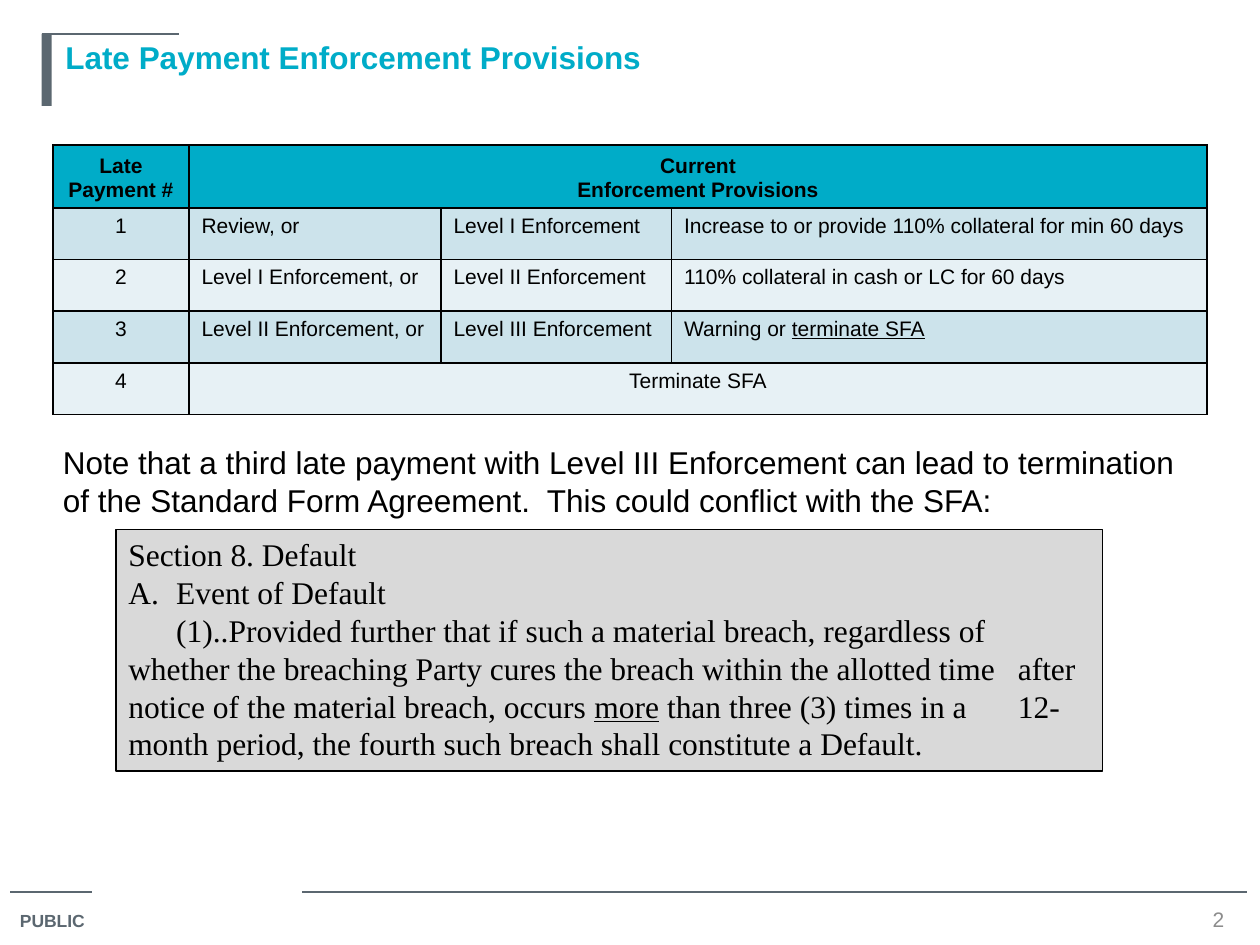
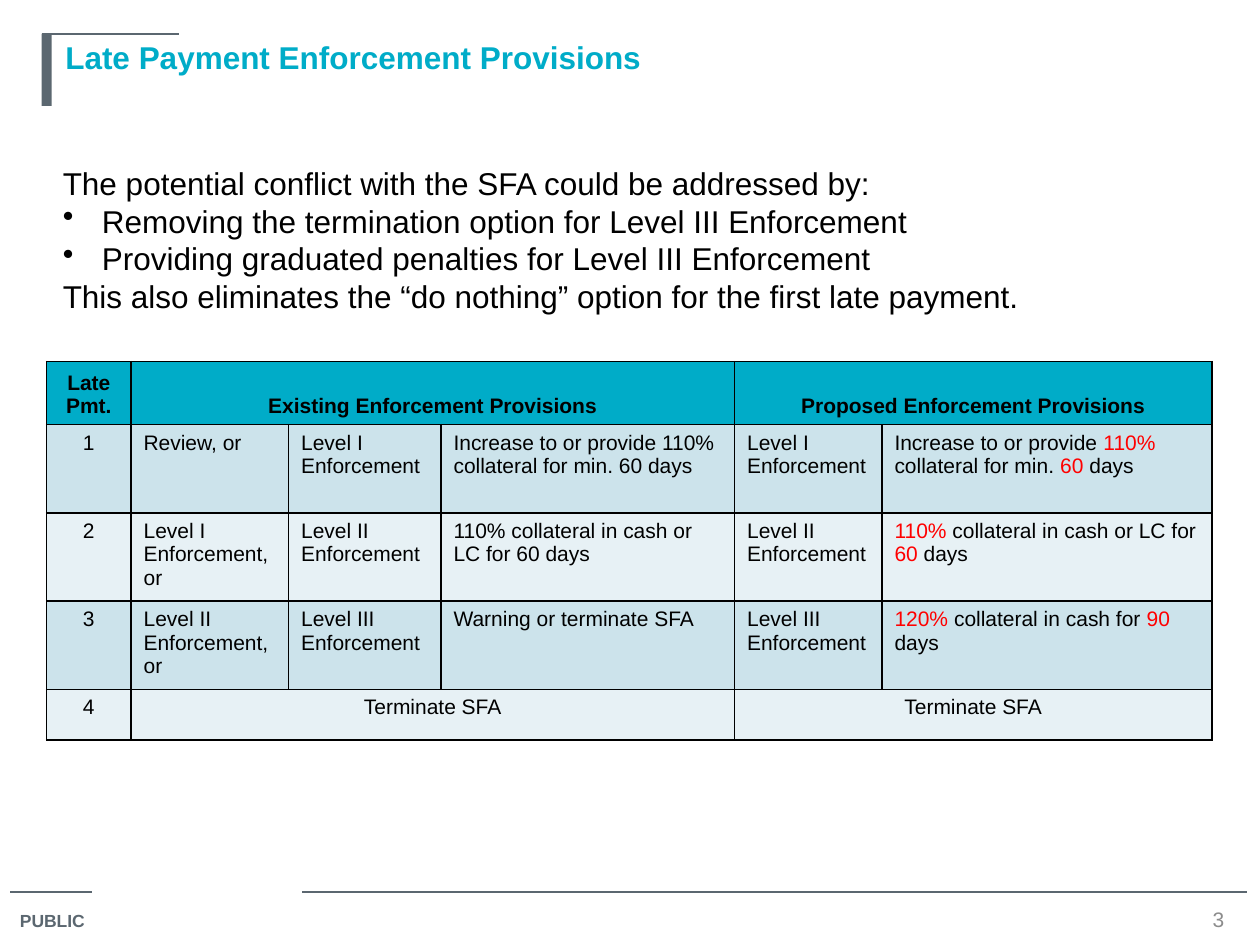
from lxml import etree
from pptx import Presentation
from pptx.dml.color import RGBColor
from pptx.enum.shapes import MSO_CONNECTOR, MSO_SHAPE
from pptx.enum.text import MSO_ANCHOR, PP_ALIGN
from pptx.oxml.ns import qn
from pptx.util import Inches, Pt

SLATE = RGBColor(0x5B, 0x67, 0x70)
TEAL = RGBColor(0x00, 0xAC, 0xC8)
BAND_DARK = RGBColor(0xCC, 0xE3, 0xEB)
BAND_LIGHT = RGBColor(0xE7, 0xF1, 0xF5)
QUOTE_GRAY = RGBColor(0xD9, 0xD9, 0xD9)
NUMBER_GRAY = RGBColor(0x8C, 0x8C, 0x8C)
BLACK = RGBColor(0, 0, 0)
RED = RGBColor(0xFF, 0, 0)
LEFT, CENTER = PP_ALIGN.LEFT, PP_ALIGN.CENTER
TOP, MIDDLE, BOTTOM = MSO_ANCHOR.TOP, MSO_ANCHOR.MIDDLE, MSO_ANCHOR.BOTTOM
STRAIGHT = MSO_CONNECTOR.STRAIGHT
RECTANGLE = MSO_SHAPE.RECTANGLE
TITLE = "Late Payment Enforcement Provisions"

CURRENT_ROWS = [
    ["Late Payment #", "Current\nEnforcement Provisions", None, None],
    ["1", "Review, or", "Level I Enforcement",
     "Increase to or provide 110% collateral for min 60 days"],
    ["2", "Level I Enforcement, or", "Level II Enforcement",
     "110% collateral in cash or LC for 60 days"],
    ["3", "Level II Enforcement, or", "Level III Enforcement",
     "Warning or *terminate SFA*"],
    ["4", "Terminate SFA", None, None],
]
PROPOSED_ROWS = [
    ["Late Pmt.", "Existing Enforcement Provisions", None, None,
     "Proposed Enforcement Provisions", None],
    ["1", "Review, or", "Level I Enforcement",
     "Increase to or provide 110% collateral for min. 60 days",
     "Level I Enforcement", "Increase to or provide *110% *collateral for min. *60* days"],
    ["2", "Level I Enforcement, or", "Level II Enforcement",
     "110% collateral in cash or LC for 60 days",
     "Level II Enforcement", "*110%* collateral in cash or LC for *60* days"],
    ["3", "Level II Enforcement, or", "Level III Enforcement",
     "Warning or terminate SFA",
     "Level III Enforcement", "*120%* collateral in cash for *90* days"],
    ["4", "Terminate SFA", None, None, "Terminate SFA", None],
]


def underline(font):
    """Mark a run by underlining it."""
    font.underline = True


def redden(font):
    """Mark a run by colouring it red."""
    font.color.rgb = RED


def write(frame, lines, size, color=BLACK, bold=False, name="Arial",
          align=LEFT, emphasis=underline, bullets=None):
    """Fill a text frame; pieces between asterisks get the emphasis."""
    for index, line in enumerate(lines):
        paragraph = frame.paragraphs[0] if index == 0 else frame.add_paragraph()
        paragraph.alignment = align
        for position, piece in enumerate(line.split("*")):
            if piece:
                run = paragraph.add_run()
                run.text = piece
                if position % 2:
                    emphasis(run.font)
        if bullets and index in bullets:
            add_bullet(paragraph, *bullets[index])
        if "\t" in line:
            add_tabs(paragraph, 0.38, 7.06)
        paragraph.font.size = Pt(size)
        paragraph.font.name = name
        paragraph.font.bold = bold
        paragraph.font.color.rgb = color


def add_bullet(paragraph, tag, attribute, value, indent):
    """Give a paragraph a hanging bullet or number."""
    properties = paragraph._p.get_or_add_pPr()
    properties.set("marL", str(Inches(indent)))
    properties.set("indent", str(-Inches(indent)))
    etree.SubElement(properties, qn(tag)).set(attribute, value)


def add_tabs(paragraph, *stops):
    """Set left tab stops, in inches."""
    tabs = etree.SubElement(paragraph._p.get_or_add_pPr(), qn("a:tabLst"))
    for stop in stops:
        etree.SubElement(tabs, qn("a:tab"), pos=str(Inches(stop)), algn="l")


def add_text(slide, box, lines, size, anchor=TOP, **style):
    """Place a wrapping text box."""
    frame = slide.shapes.add_textbox(*map(Inches, box)).text_frame
    frame.word_wrap = True
    frame.vertical_anchor = anchor
    write(frame, lines, size, **style)


def add_rectangle(slide, box, fill):
    """Place a flat filled rectangle without an outline."""
    shape = slide.shapes.add_shape(RECTANGLE, *map(Inches, box))
    shape.shadow.inherit = False
    shape.fill.solid()
    shape.fill.fore_color.rgb = fill
    shape.line.fill.background()
    return shape


def add_rule(slide, left, right, top):
    """Draw a thin horizontal rule."""
    rule = slide.shapes.add_connector(
        STRAIGHT, Inches(left), Inches(top), Inches(right), Inches(top))
    rule.line.color.rgb = SLATE
    rule.line.width = Pt(0.75)
    etree.SubElement(rule._element.spPr, qn("a:effectLst"))


def add_header(slide, left, top):
    """Draw the title with its corner bracket."""
    add_rectangle(slide, (left, top, 0.08, 0.57), SLATE)
    add_rule(slide, left, left + 1.09, top)
    add_text(slide, (left + 0.09, top - 0.02, 9.25, 1.25), [TITLE], 18,
             color=TEAL, bold=True)


def add_footer(slide, top, number):
    """Draw the footer rules, label and slide number."""
    add_rule(slide, 0.08, 0.73, top)
    add_rule(slide, 2.4, 9.9, top)
    add_text(slide, (0.06, top + 0.09, 0.77, 0.28), ["PUBLIC"], 10,
             color=SLATE, bold=True)
    add_text(slide, (9.42, top + 0.1, 0.5, 0.23), [str(number)], 12,
             anchor=MIDDLE, color=NUMBER_GRAY, align=CENTER)


def add_borders(cell):
    """Outline a cell in black."""
    properties = cell._tc.get_or_add_tcPr()
    for side in ("a:lnL", "a:lnR", "a:lnT", "a:lnB"):
        line = etree.SubElement(properties, qn(side), w=str(Pt(1)))
        fill = etree.SubElement(line, qn("a:solidFill"))
        etree.SubElement(fill, qn("a:srgbClr"), val=str(BLACK))


def add_provisions(slide, left, top, widths, heights, rows, emphasis):
    """Build a banded table, where None continues the cell on its left."""
    table = slide.shapes.add_table(
        len(rows), len(widths), Inches(left), Inches(top),
        Inches(sum(widths)), Inches(sum(heights))).table
    table.first_row = table.horz_banding = False
    for column, width in zip(table.columns, widths):
        column.width = Inches(width)
    for row, height in zip(table.rows, heights):
        row.height = Inches(height)
    for row_index, row in enumerate(rows):
        heading = row_index == 0
        band = BAND_DARK if row_index % 2 else BAND_LIGHT
        for column_index, text in enumerate(row):
            cell = table.cell(row_index, column_index)
            add_borders(cell)
            cell.fill.solid()
            cell.fill.fore_color.rgb = TEAL if heading else band
            if text is None:
                continue
            end = column_index + 1
            while end < len(row) and row[end] is None:
                end += 1
            spans = end - column_index > 1
            if spans:
                cell.merge(table.cell(row_index, end - 1))
            if heading:
                cell.vertical_anchor = BOTTOM
            centered = heading or spans or column_index == 0
            write(cell.text_frame, text.split("\n"), 12, bold=heading,
                  align=CENTER if centered else LEFT, emphasis=emphasis)


def add_quotation(slide, box):
    """Draw the gray excerpt from the agreement."""
    shape = add_rectangle(slide, box, QUOTE_GRAY)
    shape.line.color.rgb = BLACK
    shape.line.width = Pt(0.75)
    frame = shape.text_frame
    frame.word_wrap = True
    frame.vertical_anchor = TOP
    write(frame, [
        "Section 8. Default",
        "Event of Default",
        "\t(1)..Provided further that if such a material breach, regardless of "
        "\twhether the breaching Party cures the breach within the allotted time "
        "\tafter notice of the material breach, occurs *more* than three (3) times "
        "in a \t12-month period, the fourth such breach shall constitute a Default.",
    ], 18, name="Times New Roman",
        bullets={1: ("a:buAutoNum", "type", "alphaUcPeriod", 0.38)})


def add_base_slide(presentation, number):
    """Add a blank slide with the shared header and footer."""
    slide = presentation.slides.add_slide(presentation.slide_layouts[6])
    add_footer(slide, 7.08, number)
    add_header(slide, 0.33, 0.27)
    return slide


def build_current_slide(presentation):
    """Show the current provisions and the conflicting section."""
    slide = add_base_slide(presentation, 2)
    add_provisions(slide, 0.42, 1.15, [1.08, 2, 1.83, 4.25],
                   [0.47] + [0.41] * 4, CURRENT_ROWS, underline)
    add_text(slide, (0.4, 3.47, 9.19, 0.71), [
        "Note that a third late payment with Level III Enforcement can lead to "
        "termination of the Standard Form Agreement.  This could conflict with "
        "the SFA:"], 18)
    add_quotation(slide, (0.92, 4.2, 7.83, 1.92))


def build_proposed_slide(presentation):
    """Compare the existing provisions with the proposed ones."""
    slide = add_base_slide(presentation, 3)
    add_provisions(slide, 0.37, 2.87, [0.67, 1.25, 1.21, 2.33, 1.17, 2.62],
                   [0.47, 0.7, 0.7, 0.7, 0.4], PROPOSED_ROWS, redden)
    bullet = ("a:buChar", "char", "•", 0.31)
    add_text(slide, (0.4, 1.25, 9.19, 1.31), [
        "The potential conflict with the SFA could be addressed by:",
        "Removing the termination option for Level III Enforcement",
        "Providing graduated penalties for Level III Enforcement",
        "This also eliminates the “do nothing” option for the first late payment.",
    ], 18, bullets={1: bullet, 2: bullet})


def main():
    """Build and save the presentation."""
    presentation = Presentation()
    presentation.slide_width = Inches(10)
    presentation.slide_height = Inches(7.5)
    build_current_slide(presentation)
    build_proposed_slide(presentation)
    presentation.save("out.pptx")


if __name__ == "__main__":
    main()
